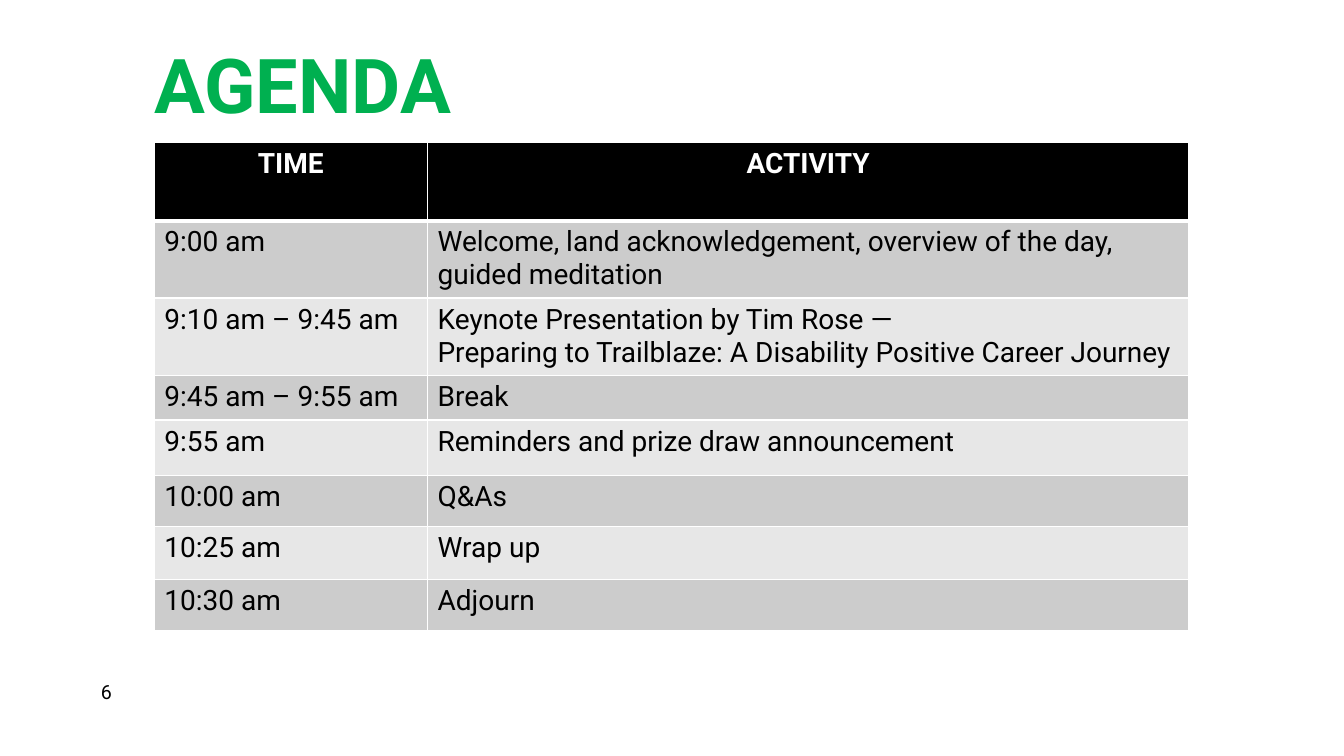
from dataclasses import dataclass

from lxml.etree import SubElement
from pptx import Presentation
from pptx.dml.color import RGBColor
from pptx.enum.text import MSO_ANCHOR, MSO_AUTO_SIZE, PP_ALIGN
from pptx.oxml.ns import qn
from pptx.util import Inches, Pt

TITLE = "AGENDA"
PAGE_NUMBER = "6"
HEADER = ("TIME", "ACTIVITY")
# Time, activity, row height in inches
SESSIONS = [
    ("9:00 am", "Welcome, land acknowledgement, overview of the day, guided meditation", 0.76),
    ("9:10 am – 9:45 am", "Keynote Presentation by Tim Rose —\n"
     "Preparing to Trailblaze: A Disability Positive Career Journey", 0.77),
    ("9:45 am – 9:55 am", "Break", 0.44),
    ("9:55 am", "Reminders and prize draw announcement", 0.55),
    ("10:00 am", "Q&As", 0.51),
    ("10:25 am", "Wrap up", 0.52),
    ("10:30 am", "Adjourn", 0.51),
]
HEADER_HEIGHT = 0.78
COLUMN_WIDTHS = (2.71, 7.55)
TABLE_LEFT, TABLE_TOP = 1.53, 1.41


@dataclass(frozen=True)
class Theme:
    font: str = "Roboto"
    title_size: int = 54
    table_size: int = 20
    number_size: int = 14
    title: str = "00B050"
    dark: str = "000000"
    light: str = "FFFFFF"
    bands: tuple = ("CCCCCC", "E7E7E7")
    thin: int = 1
    thick: int = 3


THEME = Theme()


def write_text(frame, text, size, color=THEME.dark, bold=False, align=PP_ALIGN.LEFT):
    frame.text = text
    for paragraph in frame.paragraphs:
        paragraph.alignment = align
        for run in paragraph.runs:
            font = run.font
            font.name, font.size, font.bold = THEME.font, Pt(size), bold
            font.color.rgb = RGBColor.from_string(color)


def set_borders(cell, **widths):
    """Draw cell edges in the light colour; widths are points keyed by L, R, T, B."""
    properties = cell._tc.get_or_add_tcPr()
    for index, (side, width) in enumerate(widths.items()):
        line = SubElement(properties, qn(f"a:ln{side}"), w=str(Pt(width)))
        fill = SubElement(line, qn("a:solidFill"))
        SubElement(fill, qn("a:srgbClr"), val=THEME.light)
        properties.insert(index, line)


def add_title(slide):
    title = slide.shapes.title
    title.left, title.top = Inches(1.43), Inches(0.33)
    title.width, title.height = Inches(3.5), Inches(1.01)
    frame = title.text_frame
    frame.vertical_anchor = MSO_ANCHOR.TOP
    frame.auto_size = MSO_AUTO_SIZE.NONE
    write_text(frame, TITLE, THEME.title_size, THEME.title, bold=True)


def add_agenda(slide):
    rows = [HEADER] + [session[:2] for session in SESSIONS]
    heights = [HEADER_HEIGHT] + [session[2] for session in SESSIONS]
    table = slide.shapes.add_table(
        len(rows), len(HEADER), Inches(TABLE_LEFT), Inches(TABLE_TOP),
        Inches(sum(COLUMN_WIDTHS)), Inches(sum(heights))).table
    for column, width in zip(table.columns, COLUMN_WIDTHS):
        column.width = Inches(width)
    for row_index, (texts, height) in enumerate(zip(rows, heights)):
        is_header = row_index == 0
        table.rows[row_index].height = Inches(height)
        fill_color = THEME.dark if is_header else THEME.bands[(row_index - 1) % 2]
        for column_index, text in enumerate(texts):
            cell = table.cell(row_index, column_index)
            cell.fill.solid()
            cell.fill.fore_color.rgb = RGBColor.from_string(fill_color)
            set_borders(cell, L=THEME.thin, R=THEME.thin,
                        T=THEME.thick if row_index == 1 else THEME.thin,
                        B=THEME.thick if is_header else THEME.thin)
            write_text(cell.text_frame, text, THEME.table_size,
                       color=THEME.light if is_header else THEME.dark, bold=is_header,
                       align=PP_ALIGN.CENTER if is_header else PP_ALIGN.LEFT)


def add_page_number(slide):
    box = slide.shapes.add_textbox(Inches(1), Inches(6.75), Inches(2.67), Inches(0.24))
    frame = box.text_frame
    frame.word_wrap = True
    frame.margin_left = frame.margin_right = frame.margin_top = frame.margin_bottom = 0
    write_text(frame, PAGE_NUMBER, THEME.number_size)


def main():
    presentation = Presentation()
    presentation.slide_width, presentation.slide_height = Inches(13.33), Inches(7.5)
    slide = presentation.slides.add_slide(presentation.slide_layouts.get_by_name("Title Only"))
    add_page_number(slide)
    add_agenda(slide)
    add_title(slide)
    presentation.save("out.pptx")


if __name__ == "__main__":
    main()
